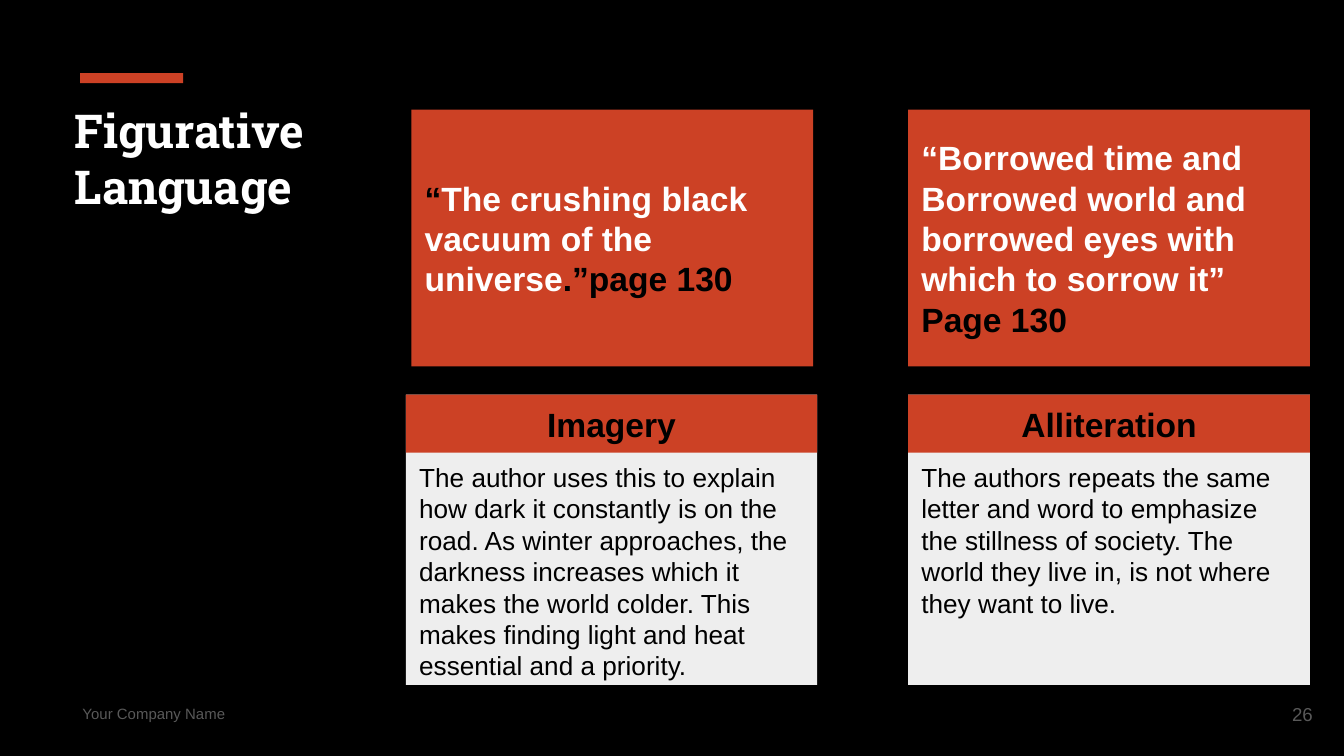
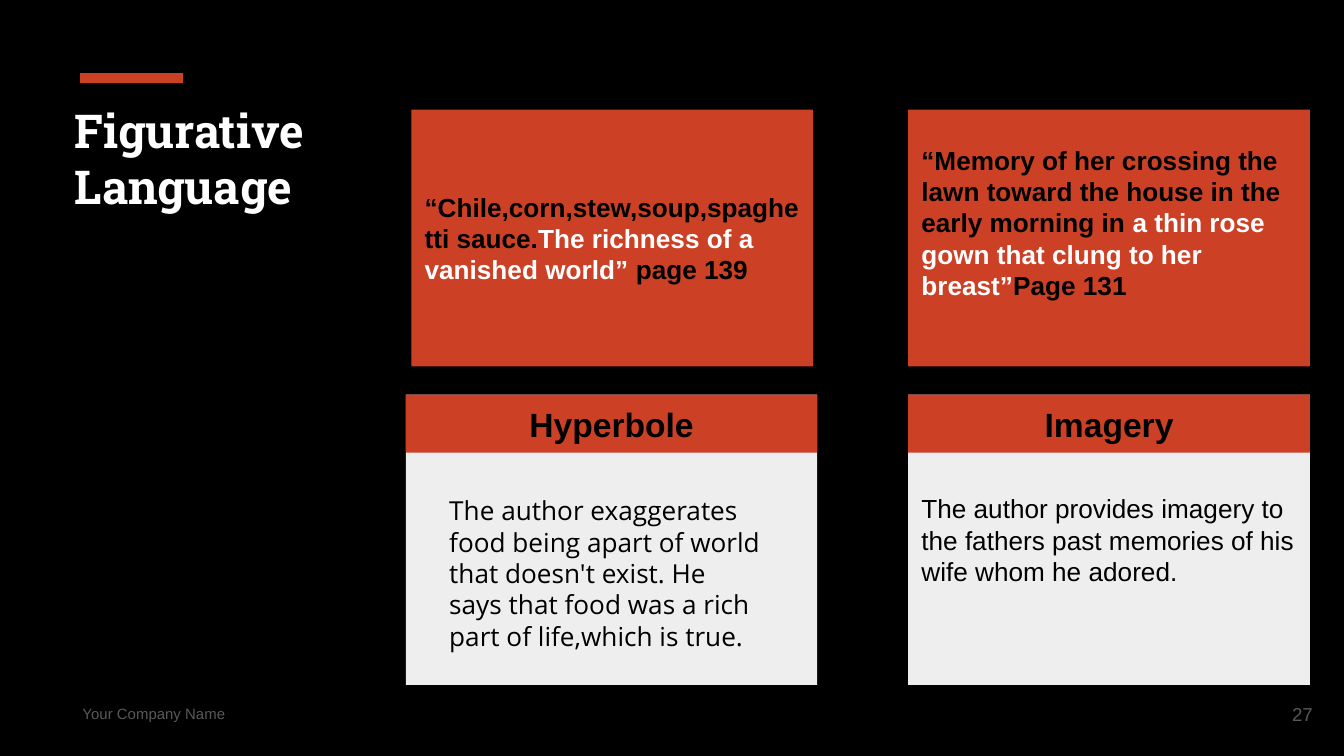
from dataclasses import dataclass
from pptx import Presentation
from pptx.dml.color import RGBColor
from pptx.enum.shapes import MSO_SHAPE
from pptx.enum.text import MSO_ANCHOR, PP_ALIGN
from pptx.util import Pt


@dataclass(frozen=True)
class Theme:
    black: str = "000000"
    white: str = "FFFFFF"
    accent: str = "CC4125"
    panel: str = "EEEEEE"
    muted: str = "595959"
    font: str = "Arial"
    title_font: str = "Roboto Slab"
    note_font: str = "Open Sans"
    title: int = 25
    heading: int = 18
    body: int = 14
    number: int = 10
    footer: int = 8
    leading: float = 1.2
    inset: float = 7.2


T = Theme()
K, W = T.black, T.white


def add_rect(s, box, color):
    sp = s.shapes.add_shape(MSO_SHAPE.RECTANGLE, *map(Pt, box))
    sp.shadow.inherit = False
    sp.fill.solid()
    sp.fill.fore_color.rgb = RGBColor.from_string(color)
    sp.line.fill.background()
    return sp


def write(sp, paragraphs, size, font=T.font, bold=False, align=PP_ALIGN.LEFT,
          anchor=MSO_ANCHOR.MIDDLE, bottom=T.inset):
    tf = sp.text_frame
    tf.word_wrap = True
    tf.vertical_anchor = anchor
    tf.margin_left = tf.margin_right = tf.margin_top = Pt(T.inset)
    tf.margin_bottom = Pt(bottom)
    for i, runs in enumerate(paragraphs):
        p = tf.add_paragraph() if i else tf.paragraphs[0]
        p.alignment = align
        p.line_spacing = Pt(size * T.leading)
        for text, color in runs:
            r = p.add_run()
            r.text = text
            r.font.name = font
            r.font.size = Pt(size)
            r.font.bold = bold
            r.font.color.rgb = RGBColor.from_string(color)


QUOTE_TOP, QUOTE_H = 58.8, 137.5
PANEL_TOP, PANEL_H, HEADING_H = 211.5, 155.5, 31
QUOTE_X = [(220.4, 215.3), (486.5, 215.3)]
PANEL_X = [(217.5, 220.3), (486.5, 215.3)]
NOTE_BOX = (233.6, 257.8, 182.9, 97.9)

slides = [
    (26, T.heading, [
        dict(quote=[[("“", K), ("The crushing black vacuum of the universe", W),
                     (".”page 130", K)]],
             heading="Imagery",
             body="The author uses this to explain how dark it constantly is on the road. "
                  "As winter approaches, the darkness increases which it makes the world "
                  "colder. This makes finding light and heat essential and a priority.",
             body_layout=dict(anchor=MSO_ANCHOR.BOTTOM, bottom=2.1)),
        dict(quote=[[("“Borrowed time and Borrowed world and borrowed eyes with "
                      "which to sorrow it”", W)],
                    [("Page 130", K)]],
             heading="Alliteration",
             body="The authors repeats the same letter and word to emphasize the stillness "
                  "of society. The world they live in, is not where they want to live."),
    ]),
    (27, T.body, [
        dict(quote=[[("“Chile,corn,stew,soup,spaghetti sauce.", K),
                     ("The richness of a vanished world” ", W), ("page 139", K)]],
             heading="Hyperbole",
             note="The author exaggerates food being apart of world that doesn't exist. "
                  "He says that food was a rich part of life,which is true."),
        dict(quote=[[("“Memory of her crossing the lawn toward the house in the early "
                      "morning in ", K),
                     ("a thin rose gown that clung to her breast”", W),
                     ("Page 131", K)]],
             quote_layout=dict(bottom=24),
             heading="Imagery",
             body="The author provides imagery to the fathers past memories of his wife "
                  "whom he adored."),
    ]),
]

prs = Presentation()
prs.slide_width, prs.slide_height = Pt(720), Pt(405)

for number, quote_size, cards in slides:
    s = prs.slides.add_slide(prs.slide_layouts[6])
    s.background.fill.solid()
    s.background.fill.fore_color.rgb = RGBColor.from_string(K)

    add_rect(s, (42.9, 39.2, 55.2, 5.3), T.accent)
    footer = s.shapes.add_textbox(Pt(37.1), Pt(373), Pt(120), Pt(19))
    write(footer, [[("Your Company Name", T.muted)]], T.footer)
    page = s.shapes.add_textbox(Pt(667.2), Pt(367.2), Pt(43.2), Pt(31))
    write(page, [[(str(number), T.muted)]], T.number, align=PP_ALIGN.RIGHT)
    title = s.shapes.add_textbox(Pt(33), Pt(47.5), Pt(152.6), Pt(83.5))
    write(title, [[("Figurative Language", W)]], T.title, T.title_font, bold=True,
          anchor=MSO_ANCHOR.TOP)

    for card, (qx, qw), (px, pw) in zip(cards, QUOTE_X, PANEL_X):
        quote = add_rect(s, (qx, QUOTE_TOP, qw, QUOTE_H), T.accent)
        write(quote, card["quote"], quote_size, bold=True, **card.get("quote_layout", {}))
        panel = add_rect(s, (px, PANEL_TOP, pw, PANEL_H), T.panel)
        if "body" in card:
            write(panel, [[(card["body"], K)]], T.body, **card.get("body_layout", {}))
        heading = add_rect(s, (px, PANEL_TOP, pw, HEADING_H), T.accent)
        write(heading, [[(card["heading"], K)]], T.heading, bold=True,
              align=PP_ALIGN.CENTER)
        if "note" in card:
            note = s.shapes.add_textbox(*map(Pt, NOTE_BOX))
            write(note, [[(card["note"], K)]], T.body, T.note_font, anchor=MSO_ANCHOR.TOP)

prs.save("out.pptx")
